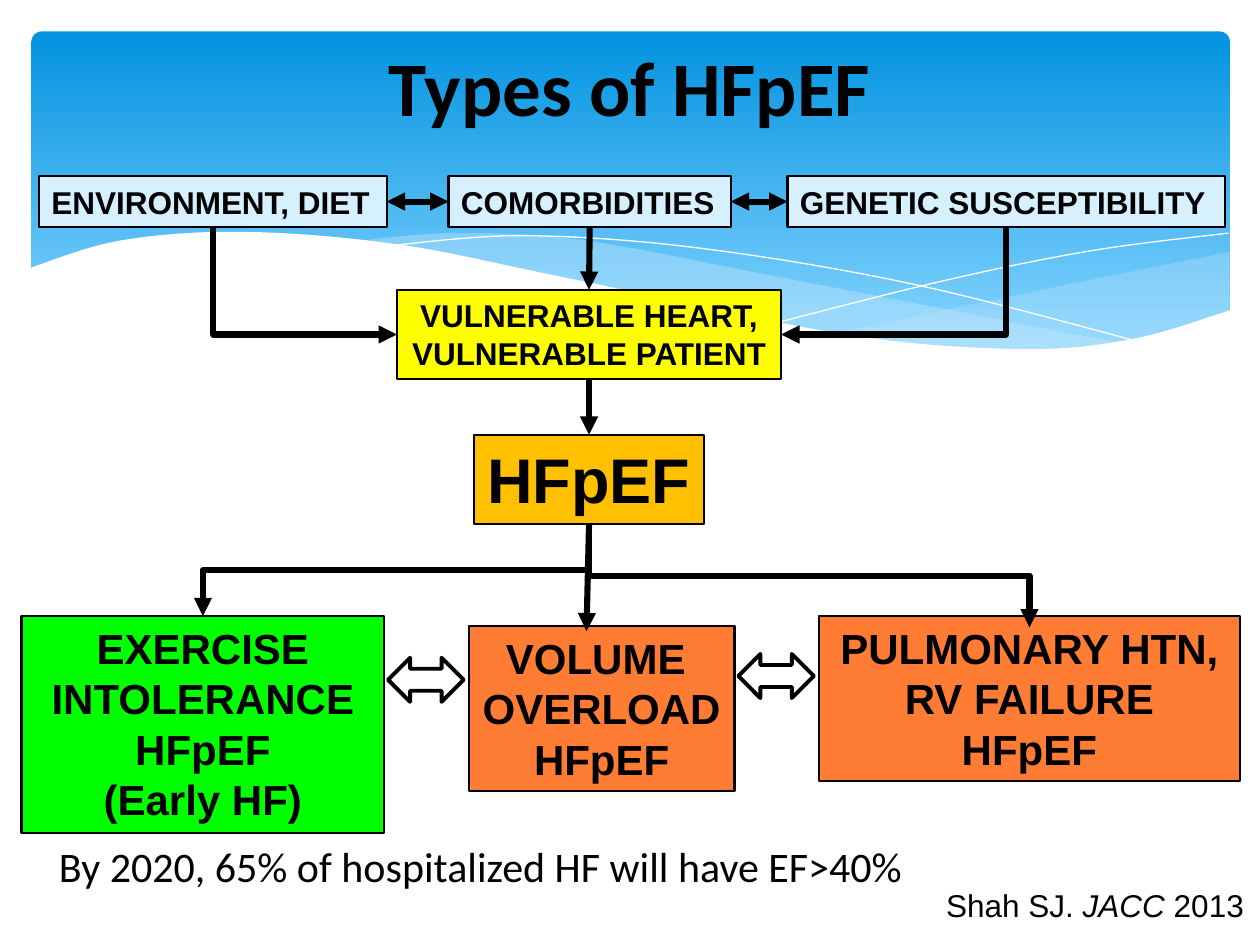
from lxml.etree import SubElement as Sub
from pptx import Presentation
from pptx.dml.color import RGBColor as RGB
from pptx.enum.shapes import MSO_CONNECTOR as Link, MSO_SHAPE as Kind
from pptx.enum.text import MSO_ANCHOR as Anchor, PP_ALIGN as Align
from pptx.oxml.ns import qn
from pptx.util import Inches, Pt

HEX = {"black": "000000", "white": "FFFFFF", "ice": "D6F0FF", "yellow": "FFFF00",
       "gold": "FFC000", "green": "00FF00", "orange": "FF7C35",
       "deep": "0293E0", "sky": "83D3FE", "mist": "C6E7FC"}
L, C, R = Align.LEFT, Align.CENTER, Align.RIGHT

# Boxes: name -> place, fill, size, alignment, wrap, lines
BOXES = {
    "diet": ((0.31, 1.4, 2.76, 0.4), "ice", 18, L, False, ["ENVIRONMENT, DIET"]),
    "comorb": ((3.56, 1.4, 2.24, 0.4), "ice", 18, L, False, ["COMORBIDITIES"]),
    "genes": ((6.25, 1.4, 3.47, 0.4), "ice", 18, L, False, ["GENETIC SUSCEPTIBILITY"]),
    "heart": ((3.15, 2.3, 3.05, 0.71), "yellow", 18, C, False,
              ["VULNERABLE HEART,", "VULNERABLE PATIENT"]),
    "hfpef": ((3.76, 3.45, 1.83, 0.71), "gold", 36, C, False, ["HFpEF"]),
    "early": ((0.17, 4.89, 2.88, 1.72), "green", 24, C, True,
              ["EXERCISE INTOLERANCE", "HFpEF", "(Early HF)"]),
    "volume": ((3.72, 4.97, 2.11, 1.31), "orange", 24, C, False,
               ["VOLUME ", "OVERLOAD", "HFpEF"]),
    "lung": ((6.5, 4.89, 3.34, 1.31), "orange", 24, C, True,
             ["PULMONARY HTN,", "RV FAILURE", "HFpEF"]),
}
# Arrows: from box and side, to box and side, form, nudge of the tip
LINKS = [
    ("diet", "bottom", "heart", "left", "bentConnector2", (0, 0)),
    ("genes", "bottom", "heart", "right", "bentConnector2", (0, 0)),
    ("diet", "right", "comorb", "left", "both", (0, 0)),
    ("comorb", "right", "genes", "left", "both", (0, 0)),
    ("comorb", "bottom", "heart", "top", "one", (0, 0)),
    ("heart", "bottom", "hfpef", "top", "one", (0, 0)),
    ("hfpef", "bottom", "early", "top", "bentConnector3", (0, 0)),
    ("hfpef", "bottom", "lung", "top", "bentConnector3", (0, 0.09)),
    ("hfpef", "bottom", "volume", "top", "one", (-0.12, 0.04)),
]
SIDES = {"left": (0, 0.5), "right": (1, 0.5), "top": (0.5, 0), "bottom": (0.5, 1)}
SWAPS = [(5.86, 5.19, 0.6, 0.35), (3.08, 5.22, 0.6, 0.35)]
# Notes: place, size, font, alignment, wrap, runs with italic flag
NOTES = [
    ((7.38, 6.98, 2.59, 0.4), 18, "Arial", R, False,
     [("Shah SJ. ", False), ("JACC ", True), ("2013", False)]),
    ((0.37, 6.62, 7.14, 0.5), 24, "Calibri", L, True,
     [("By 2020, 65% of hospitalized HF will have EF>40%", False)]),
]
# Waves: fill, opacity in percent, curves through a few knots
WAVES = [
    ("mist", 29, [[(9.76, 2), (8.61, 2.23), (6.61, 2.65)],
                  [(6.61, 2.65), (7.45, 2.75), (8.24, 2.78), (9.05, 2.69), (9.76, 2.47)]]),
    ("mist", 40, [[(2.86, 1.91), (3.61, 1.85), (4.65, 1.91), (6.29, 2.22), (8.93, 2.73)],
                  [(8.93, 2.73), (8.07, 2.78), (6.65, 2.66), (4.49, 2.22), (2.86, 1.91)]]),
    (None, 100, [[(3.09, 1.95), (4.16, 1.87), (5.56, 1.97), (7.27, 2.26), (9.07, 2.72)]]),
    (None, 100, [[(6.13, 2.57), (7.48, 2.23), (8.66, 1.99), (9.75, 1.85)]]),
    ("white", 100, [[(9.77, 2.46), (8.99, 2.69), (8.09, 2.77), (6.68, 2.65), (4.47, 2.2),
                     (3.16, 1.94), (1.93, 1.84), (0.95, 1.91), (0.23, 2.13)],
                    [(0.23, 3.29), (9.77, 3.29)]]),
]


def color(name):
    return RGB.from_string(HEX[name])


def paint(shape, fill, line=None, width=0):
    shape.shadow.inherit = False
    for part, name in ((shape.fill, fill), (shape.line.fill, line)):
        if name:
            part.solid()
            part.fore_color.rgb = color(name)
        else:
            part.background()
    if line:
        shape.line.width = Pt(width)


def write(shape, rows, size, font="Arial", align=C, wrap=True, bold=True):
    """Each row is a list of (text, italic) runs."""
    frame = shape.text_frame
    for key, val in {"word_wrap": wrap, "vertical_anchor": Anchor.TOP}.items():
        setattr(frame, key, val)
    for i, row in enumerate(rows):
        para = frame.add_paragraph() if i else frame.paragraphs[0]
        para.alignment = align
        for text, ital in row:
            run = para.add_run()
            run.text = text
            style = {"size": Pt(size), "name": font, "bold": bold, "italic": ital}
            for key, val in style.items():
                setattr(run.font, key, val)
            run.font.color.rgb = color("black")


def smooth(knots, steps=8):
    """Points of a Catmull-Rom curve through the knots."""
    ends = [knots[0], *knots, knots[-1]]
    dots = []
    for quad in zip(ends, ends[1:], ends[2:], ends[3:]):
        for i in range(steps):
            t = i / steps
            dots.append([b + t * (c - a + t * (2 * a - 5 * b + 4 * c - d
                                               + t * (3 * (b - c) + d - a))) / 2
                         for a, b, c, d in zip(*quad)])
    return dots + [knots[-1]]


def port(name, side):
    x, y, w, h = BOXES[name][0]
    u, v = SIDES[side]
    return x + u * w, y + v * h


def arrow(shapes, kind, ends, tips=("tailEnd",)):
    link = shapes.add_connector(kind, *map(Inches, ends))
    link.line.width = Pt(3.5)
    link.line.color.rgb = color("black")
    for tip in tips:
        Sub(link.line._get_or_add_ln(), qn("a:" + tip), type="triangle")
    Sub(link._element.spPr, qn("a:effectLst"))
    return link


def elbow(shapes, x1, y1, x2, y2, form):
    """Leave downwards: a sideways elbow turned about its centre."""
    w, h = y2 - y1, abs(x2 - x1)
    left, top = (x1 + x2 - w) / 2, (y1 + y2 - h) / 2
    link = arrow(shapes, Link.ELBOW, (left, top, left + w, top + h))
    props = link._element.spPr
    props.find(qn("a:prstGeom")).set("prst", form)
    right = x2 > x1
    props.xfrm.set("rot", str((270 if right else 90) * 60000))
    if right:
        props.xfrm.set("flipH", "1")


def main():
    deck = Presentation()
    deck.slide_width, deck.slide_height = Inches(10), Inches(7.5)
    slide = deck.slides.add_slide(deck.slide_layouts[5])
    shapes = slide.shapes

    # Blue sky panel
    sky = shapes.add_shape(Kind.ROUNDED_RECTANGLE, *map(Inches, (0.25, 0.25, 9.51, 2.7)))
    sky.adjustments[0] = 0.03
    paint(sky, None)
    sky.fill.gradient()
    sky.fill.gradient_angle = 270
    for stop, name, pos in zip(sky.fill.gradient_stops, ("deep", "sky"), (0, 0.9)):
        stop.color.rgb, stop.position = color(name), pos

    # Waves
    for fill, alpha, curves in WAVES:
        dots = [tuple(map(Inches, dot)) for knots in curves for dot in smooth(knots)]
        pen = shapes.build_freeform(*dots[0])
        pen.add_line_segments(dots[1:], close=bool(fill))
        wave = pen.convert_to_shape()
        paint(wave, fill, None if fill else "white")
        if alpha < 100:
            tint = wave._element.spPr.find(qn("a:solidFill"))[0]
            Sub(tint, qn("a:alpha"), val=str(alpha * 1000))

    # Boxes
    for place, fill, size, align, wrap, lines in BOXES.values():
        box = shapes.add_shape(Kind.RECTANGLE, *map(Inches, place))
        paint(box, fill, "black", 1.25)
        write(box, [[(line, False)] for line in lines], size, align=align, wrap=wrap)

    # Arrows
    for box1, side1, box2, side2, form, (dx, dy) in LINKS:
        x, y = port(box2, side2)
        ends = (*port(box1, side1), x + dx, y + dy)
        if form.startswith("bent"):
            elbow(shapes, *ends, form)
        else:
            tips = ("headEnd", "tailEnd") if form == "both" else ("tailEnd",)
            arrow(shapes, Link.STRAIGHT, ends, tips)
    for place in SWAPS:
        swap = shapes.add_shape(Kind.LEFT_RIGHT_ARROW, *map(Inches, place))
        paint(swap, None, "black", 2.25)

    # Title, raised above the panel
    title = shapes.title
    spot = {"left": 0, "top": 0.26, "width": 10, "height": 1.25}
    for key, val in spot.items():
        setattr(title, key, Inches(val))
    write(title, [[("Types of HFpEF", False)]], 44, "Calibri")
    shapes._spTree.append(title._element)

    # Notes
    for place, size, font, align, wrap, runs in NOTES:
        note = shapes.add_textbox(*map(Inches, place))
        write(note, [runs], size, font, align, wrap, False)

    deck.save("out.pptx")


if __name__ == "__main__":
    main()
